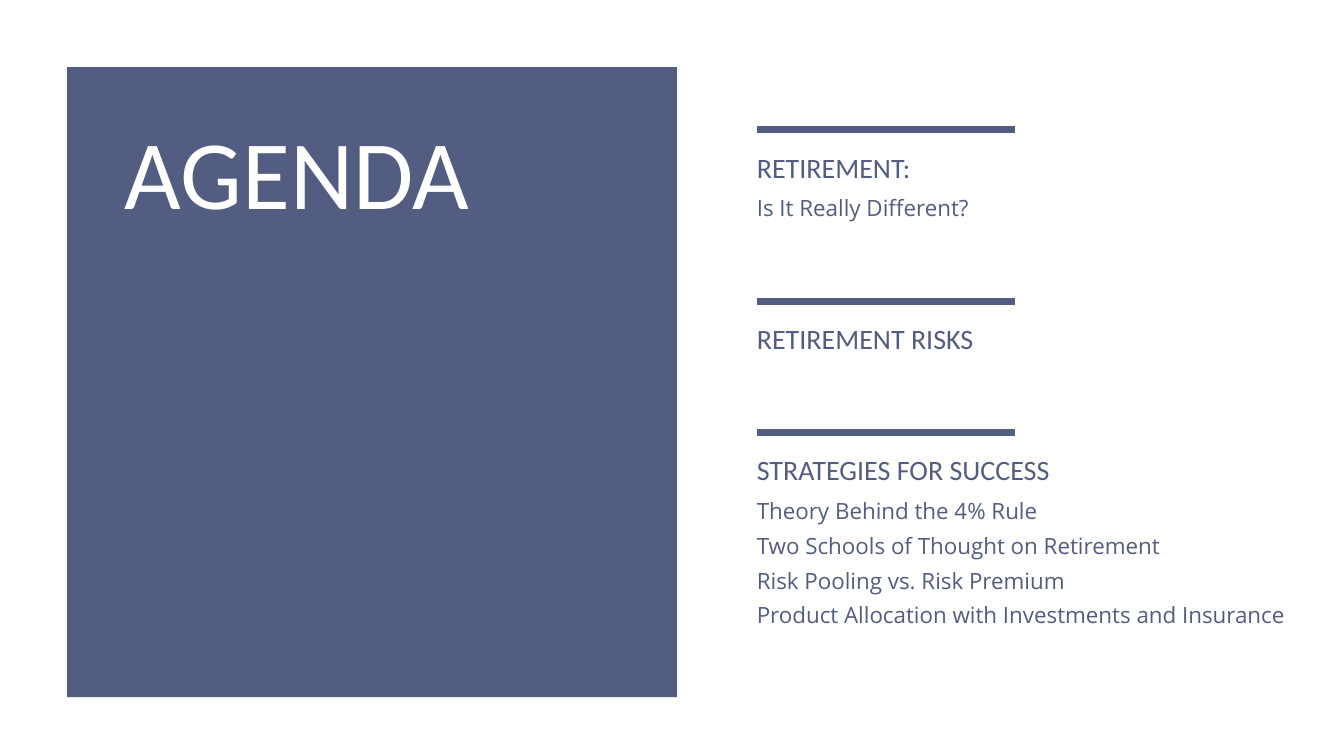
from dataclasses import dataclass

from lxml import etree
from pptx import Presentation
from pptx.dml.color import RGBColor
from pptx.enum.shapes import MSO_CONNECTOR as CONN, MSO_SHAPE as SHAPE
from pptx.enum.text import MSO_ANCHOR as ANCHOR, MSO_AUTO_SIZE as FIT
from pptx.oxml.ns import qn
from pptx.util import Pt


@dataclass(frozen=True)
class Theme:
    accent: RGBColor = RGBColor(0x53, 0x5D, 0x81)
    white: RGBColor = RGBColor(0xFF, 0xFF, 0xFF)
    head_font: str = "Calibri"
    body_font: str = "Open Sans"
    title_size: int = 70
    head_size: int = 20
    body_size: int = 16
    rule_width: int = 5


THEME = Theme()

# Top of each section, its heading and its topics
SECTIONS = [
    (92.8, "RETIREMENT:", ["Is It Really Different?"]),
    (215.2, "RETIREMENT RISKS", []),
    (308.8, "STRATEGIES FOR SUCCESS", [
        "Theory Behind the 4% Rule",
        "Two Schools of Thought on Retirement",
        "Risk Pooling vs. Risk Premium",
        "Product Allocation with Investments and Insurance",
    ]),
]


def add_text(slide, box, lines, font, size, color, spacing, pad=0, fit=FIT.NONE):
    """Place a text box with one paragraph per line."""
    tf = slide.shapes.add_textbox(*map(Pt, box)).text_frame
    tf.word_wrap = True
    tf.auto_size = fit
    tf.vertical_anchor = ANCHOR.TOP
    tf.margin_left = tf.margin_right = 0
    tf.margin_top = tf.margin_bottom = Pt(pad)
    for i, line in enumerate(lines):
        p = tf.paragraphs[0] if i == 0 else tf.add_paragraph()
        p.line_spacing = spacing
        r = p.add_run()
        r.text = line
        r.font.name = font
        r.font.size = Pt(size)
        r.font.color.rgb = color


def add_title_panel(slide, left, top, width, height):
    """Solid panel with the slide title."""
    sp = slide.shapes.add_shape(SHAPE.RECTANGLE, *map(Pt, (left, top, width, height)))
    sp.shadow.inherit = False
    sp.fill.solid()
    sp.fill.fore_color.rgb = THEME.accent
    sp.line.fill.background()
    add_text(slide, (left + 41.2, top + 47.8, width - 5.6, 152), ["AGENDA"],
             THEME.head_font, THEME.title_size, THEME.white, 0.8)


def add_section(slide, left, top, width, heading, topics):
    """Rule, heading and topics of one agenda section."""
    # Rule
    rule = slide.shapes.add_connector(
        CONN.STRAIGHT, Pt(left + 184.3), Pt(top), Pt(left), Pt(top))
    rule.line.color.rgb = THEME.accent
    rule.line.width = Pt(THEME.rule_width)
    etree.SubElement(rule._element.spPr, qn("a:effectLst"))

    # Heading
    add_text(slide, (left, top + 18.5, width, 18.5), [heading],
             THEME.head_font, THEME.head_size, THEME.accent, 0.83)

    # Topics
    if topics:
        height = 25.2 * len(topics) + 25.8
        add_text(slide, (left, top + 36.8, width, height), topics,
                 THEME.body_font, THEME.body_size, THEME.accent, 1.3,
                 pad=3.6, fit=FIT.SHAPE_TO_FIT_TEXT)


def main():
    prs = Presentation()
    prs.slide_width, prs.slide_height = Pt(960), Pt(540)
    slide = prs.slides.add_slide(prs.slide_layouts[6])
    add_title_panel(slide, 48, 48, 435.6, 450)
    for top, heading, topics in SECTIONS:
        add_section(slide, 540.6, top, 395.4, heading, topics)
    prs.save("out.pptx")


if __name__ == "__main__":
    main()
